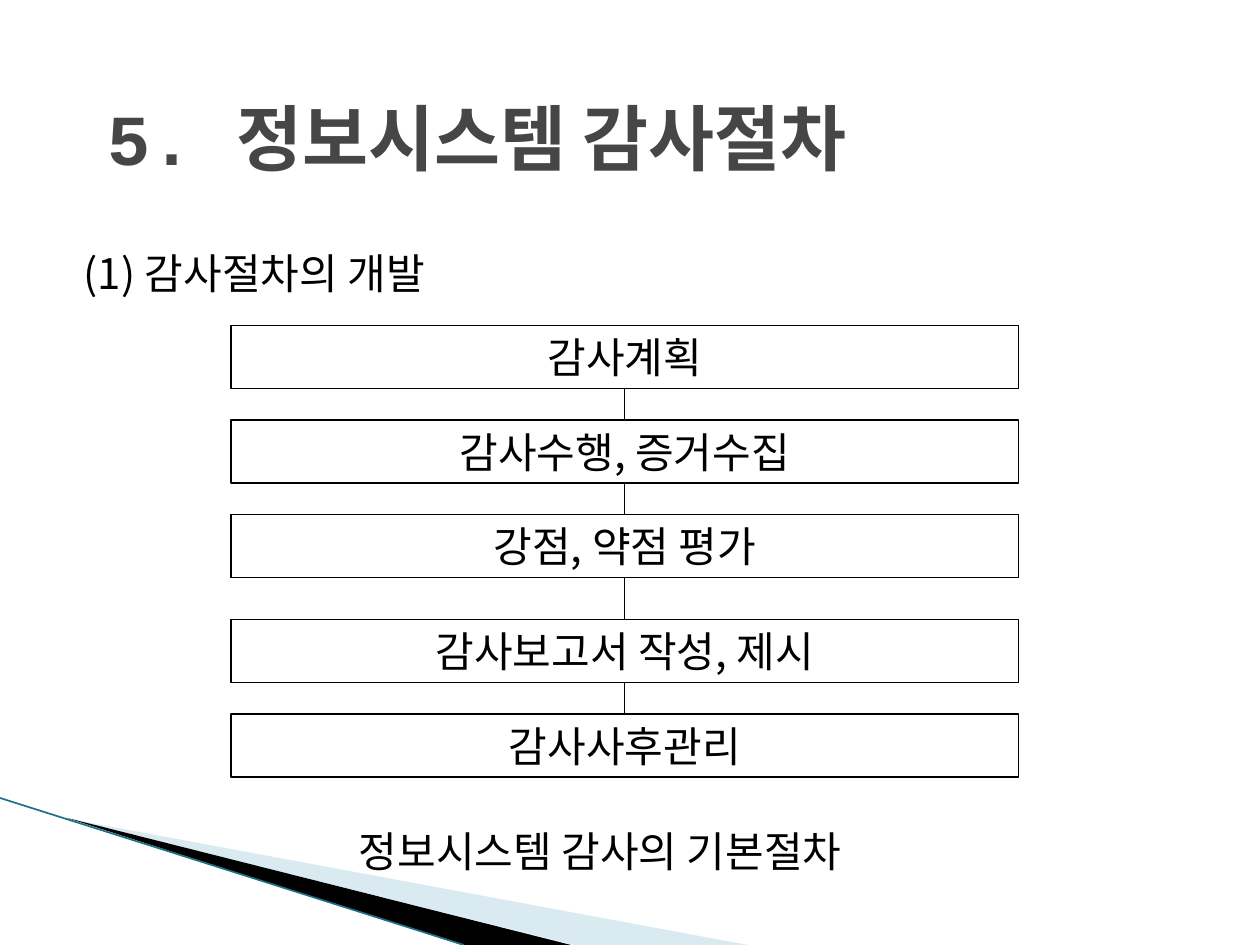
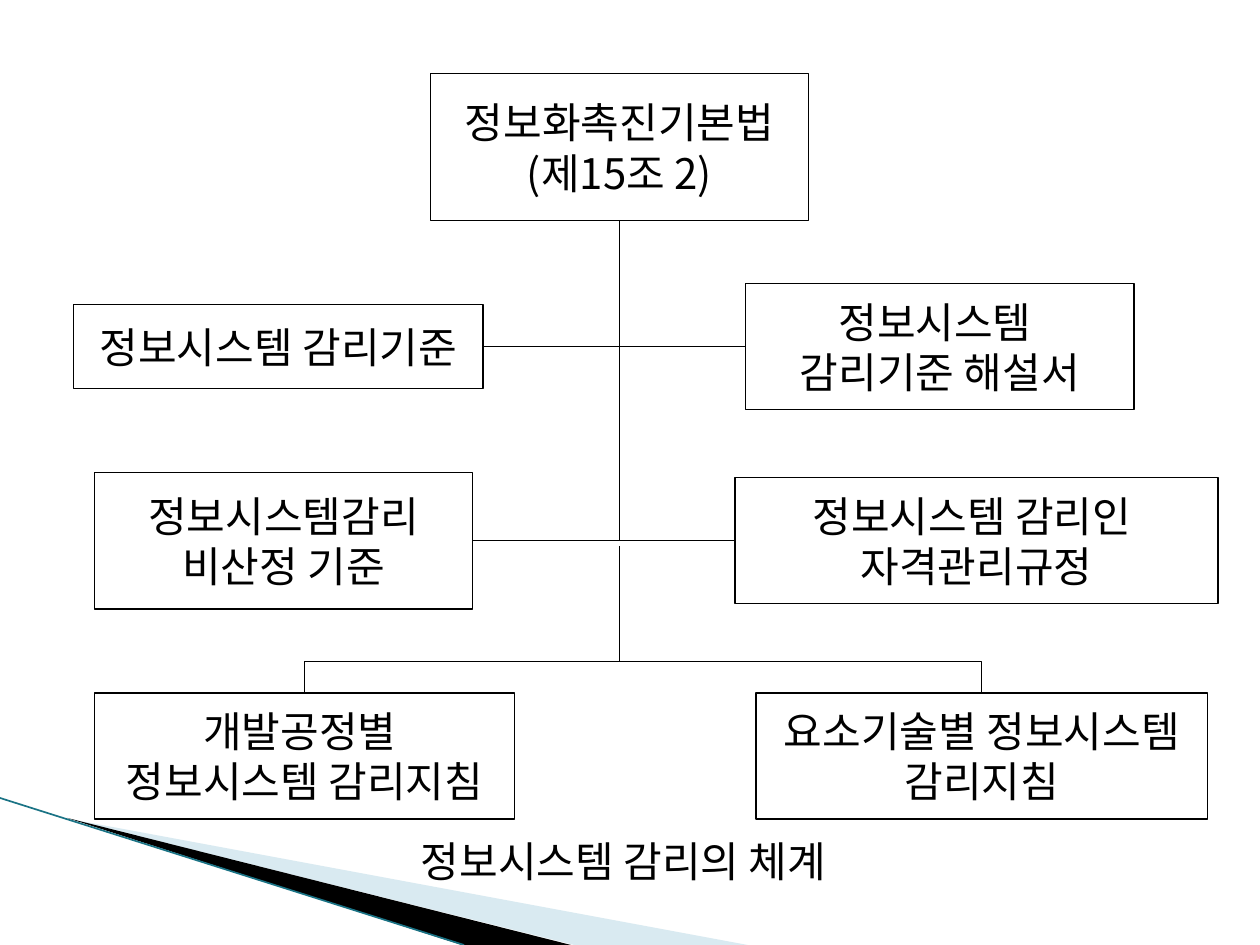
from itertools import pairwise

from lxml import etree
from pptx import Presentation, util as u
from pptx.dml.color import RGBColor
from pptx.enum import shapes, text
from pptx.oxml.ns import qn

HUES = {"ink": "000000", "paper": "FFFFFF", "head": "464646",
        "pale": "A0CBDC", "edge": "1A7385"}
SANS = "Noto Sans CJK KR"
BODY = {"name": SANS, "size": u.Pt(24)}
HEAD = {"name": "Courier New", "size": u.Pt(41), "bold": True}
COLS, ROWS = 120, 90
ALIGN, KIND = text.PP_ALIGN, shapes.MSO_CONNECTOR


class Deck:
    """Hold the style and the current slide, placed on a grid of columns and rows."""

    def __init__(self):
        self.prs = Presentation()
        self.prs.slide_width, self.prs.slide_height = u.Inches(10), u.Inches(7.5)
        self.slide = None

    def hue(self, key):
        return RGBColor.from_string(HUES[key])

    def spot(self, *vals):
        units = self.prs.slide_width / COLS, self.prs.slide_height / ROWS
        return [u.Emu(round(val * units[i % 2])) for i, val in enumerate(vals)]

    def page(self, layout):
        self.slide = self.prs.slides.add_slide(self.prs.slide_layouts[layout])
        self.wedge([(6.6, 78), (71.2, 90), (54.7, 90)], "pale", 40)
        self.wedge([(6.4, 77.9), (54.4, 90), (44, 90)], "ink")
        self.line(0, 76, 44.2, 90, "edge", 0.95)

    def wedge(self, points, key, alpha=100):
        first, *rest = [self.spot(*point) for point in points]
        pen = self.slide.shapes.build_freeform(*first)
        pen.add_line_segments(rest)
        form = pen.convert_to_shape()
        form.shadow.inherit = False
        form.fill.solid()
        form.fill.fore_color.rgb = self.hue(key)
        form.line.fill.background()
        if alpha < 100:
            tint = form._element.spPr.find(".//" + qn("a:srgbClr"))
            etree.SubElement(tint, qn("a:alpha")).set("val", str(alpha * 1000))

    def line(self, x1, y1, x2, y2, key="ink", width=0.75, kind=KIND.STRAIGHT):
        link = self.slide.shapes.add_connector(kind, *self.spot(x1, y1, x2, y2))
        link.line.color.rgb = self.hue(key)
        link.line.width = u.Pt(width)
        etree.SubElement(link._element.spPr, qn("a:effectLst"))
        return link

    def bend(self, x1, y1, x2, y2):
        link = self.line(x1, y1, x2, y2, kind=KIND.ELBOW)
        link._element.spPr.find(qn("a:prstGeom")).set("prst", "bentConnector2")

    def fit(self, shape, words, font, key, align, frame):
        body = shape.text_frame
        body.text = words
        for name, val in frame.items():
            setattr(body, name, val)
        for para in body.paragraphs:
            para.alignment = align
            for run in para.runs:
                for name, val in font.items():
                    setattr(run.font, name, val)
                run.font.color.rgb = self.hue(key)
                east = etree.SubElement(run._r.get_or_add_rPr(), qn("a:ea"))
                east.set("typeface", SANS)

    def title(self, words, *place):
        head = self.slide.shapes.title
        head.left, head.top, head.width, head.height = self.spot(*place)
        self.fit(head, words, HEAD, "head", ALIGN.LEFT,
                 {"vertical_anchor": text.MSO_ANCHOR.MIDDLE,
                  "auto_size": text.MSO_AUTO_SIZE.NONE})

    def label(self, words, *place):
        note = self.slide.shapes.add_textbox(*self.spot(*place))
        self.fit(note, words, BODY, "ink", ALIGN.LEFT,
                 {"word_wrap": False,
                  "auto_size": text.MSO_AUTO_SIZE.SHAPE_TO_FIT_TEXT})

    def box(self, words, *place):
        rect = self.slide.shapes.add_shape(shapes.MSO_SHAPE.RECTANGLE, *self.spot(*place))
        rect.shadow.inherit = False
        rect.fill.solid()
        rect.fill.fore_color.rgb = self.hue("paper")
        rect.line.color.rgb = self.hue("ink")
        rect.line.width = u.Pt(0.75)
        self.fit(rect, words, BODY, "ink", ALIGN.CENTER,
                 {"vertical_anchor": text.MSO_ANCHOR.MIDDLE, "word_wrap": False})

    def save(self):
        self.prs.save("out.pptx")


def steps(deck):
    """Draw the audit steps as a chain of boxes."""
    deck.page(5)
    deck.title("5. 정보시스템 감사절차", 9, 8, 102, 10)
    deck.label("(1) 감사절차의 개발", 6.8, 23, 38.4, 6)
    left, wide, high = 22, 75, 6
    chain = {31: "감사계획", 40: "감사수행, 증거수집", 49: "강점, 약점 평가",
             59: "감사보고서 작성, 제시", 68: "감사사후관리"}
    for top, words in chain.items():
        deck.box(words, left, top, wide, high)
    mid = left + wide / 2
    for top, below in pairwise(chain):
        deck.line(mid, top + high, mid, below)
    deck.label("정보시스템 감사의 기본절차", 33, 78, 53, 6)


def tree(deck):
    """Draw the system of audit rules as a tree."""
    deck.page(6)
    trunk, root, fork = 59, 21, 63
    deck.box("정보화촉진기본법\n(제15조 2)", 41, 7, 36, 14)
    sides = [("정보시스템 감리기준", 7, 29, 39, 8),
             ("정보시스템 \n감리기준 해설서", 71, 27, 37, 12),
             ("정보시스템감리\n비산정 기준", 9, 45, 36, 13),
             ("정보시스템 감리인 \n자격관리규정", 70, 45.5, 46, 12)]
    for words, x, y, wide, high in sides:
        deck.box(words, x, y, wide, high)
        edge = x + wide if x < trunk else x
        deck.bend(edge, y + high / 2, trunk, root)
    leaves = [("개발공정별 \n정보시스템 감리지침", 9, 66, 40, 12),
              ("요소기술별 정보시스템\n감리지침", 72, 66, 43, 12)]
    for words, x, y, wide, high in leaves:
        deck.box(words, x, y, wide, high)
        deck.bend(trunk, fork, x + wide / 2, y)
    deck.line(trunk, 52, trunk, fork)
    deck.label("정보시스템 감리의 체계", 38.9, 79, 45.1, 6)


def main():
    """Build both slides and save them."""
    deck = Deck()
    steps(deck)
    tree(deck)
    deck.save()


if __name__ == "__main__":
    main()
